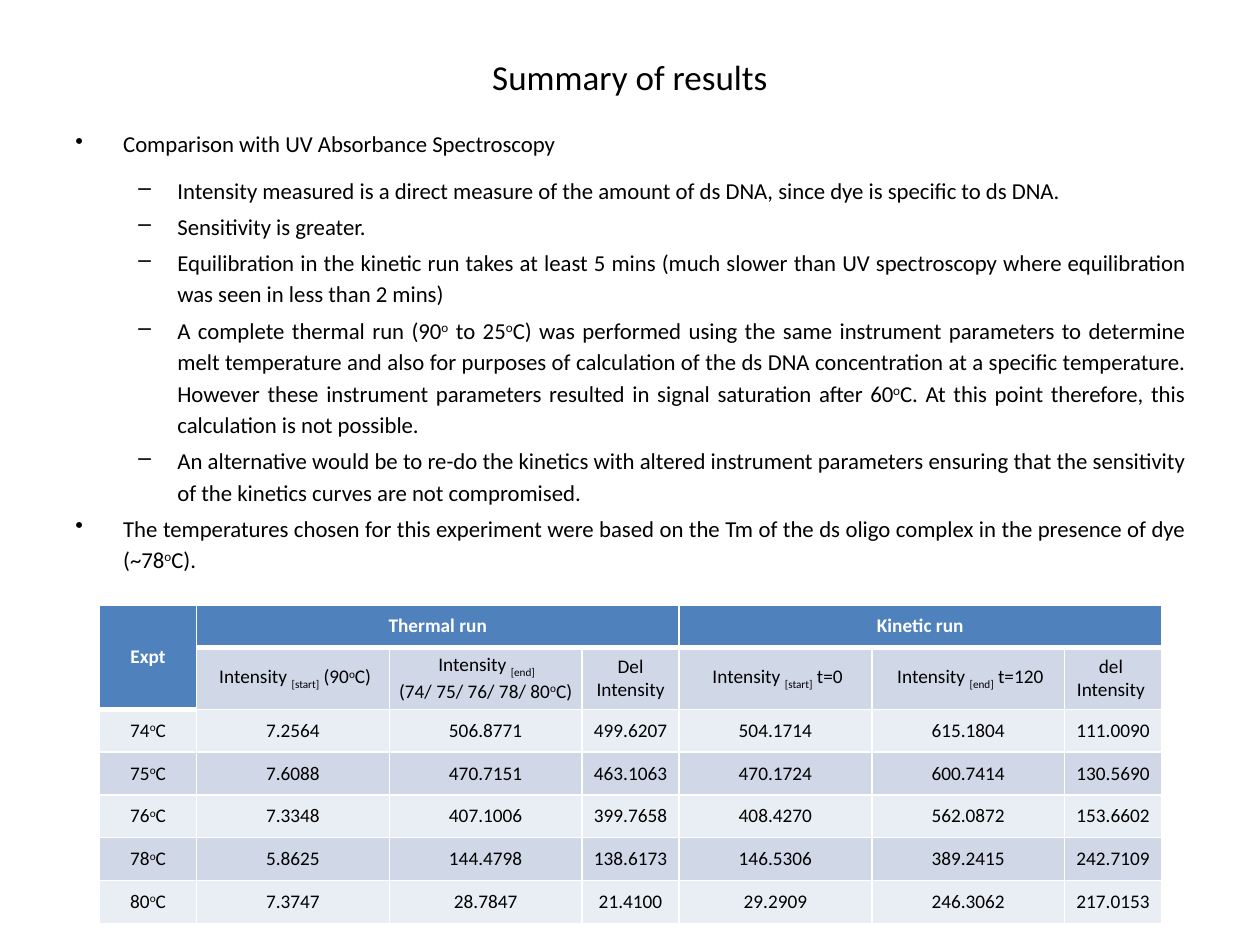
from dataclasses import dataclass

from lxml import etree
from pptx import Presentation
from pptx.dml.color import RGBColor
from pptx.enum.text import MSO_ANCHOR, PP_ALIGN
from pptx.oxml.ns import qn
from pptx.util import Inches, Pt

CENTER, JUSTIFY = PP_ALIGN.CENTER, PP_ALIGN.JUSTIFY
TOP, MIDDLE = MSO_ANCHOR.TOP, MSO_ANCHOR.MIDDLE


@dataclass(frozen=True)
class Theme:
    """Hold the colours and type sizes."""
    font: str = "Calibri"
    ink: str = "000000"
    white: str = "FFFFFF"
    head: str = "4F81BD"
    dark: str = "D0D8E8"
    light: str = "E9EDF4"
    title: int = 20
    body: int = 13
    cell: int = 11


THEME = Theme()
SHIFTS = {"^": "30000", "_": "-25000"}
LEVELS = [("•", 0.38, 0.38, 6), ("–", 0.81, 0.31, 0)]
POINTS = [
    (0, "Comparison with UV Absorbance Spectroscopy"),
    (1, "Intensity measured is a direct measure of the amount of ds DNA, "
        "since dye is specific to ds DNA."),
    (1, "Sensitivity is greater."),
    (1, "Equilibration in the kinetic run takes at least 5 mins (much slower "
        "than UV spectroscopy where equilibration was seen in less than 2 mins)"),
    (1, "A complete thermal run (90|^o| to 25|^o|C) was performed using the same "
        "instrument parameters to determine melt temperature and also for "
        "purposes of calculation of the ds DNA concentration at a specific "
        "temperature. However these instrument parameters resulted in signal "
        "saturation after 60|^o|C. At this point therefore, this calculation "
        "is not possible."),
    (1, "An alternative would be to re-do the kinetics with altered instrument "
        "parameters ensuring that the sensitivity of the kinetics curves are "
        "not compromised."),
    (0, "The temperatures chosen for this experiment were based on the Tm of "
        "the ds oligo complex in the presence of dye (~78|^o|C)."),
]
WIDTHS = [0.77] + [1.53, 1.53, 0.77] * 2
HEIGHTS = [0.34, 0.49] + [0.34] * 5
GROUPS = ["Expt", "Thermal run", "", "", "Kinetic run", "", ""]
HEADS = ["", " Intensity |_[start]| (90|^o|C)",
         " Intensity |_[end] \n(74/ 75/ 76/ 78/ 80|^o|C)", "Del\n Intensity ",
         " Intensity |_[start]| t=0", " Intensity |_[end]| t=120",
         "del \nIntensity "]
DATA = [
    ["74|^o|C", "7.2564", "506.8771", "499.6207", "504.1714", "615.1804", "111.0090"],
    ["75|^o|C", "7.6088", "470.7151", "463.1063", "470.1724", "600.7414", "130.5690"],
    ["76|^o|C", "7.3348", "407.1006", "399.7658", "408.4270", "562.0872", "153.6602"],
    ["78|^o|C", "5.8625", "144.4798", "138.6173", "146.5306", "389.2415", "242.7109"],
    ["80|^o|C", "7.3747", "28.7847", "21.4100", "29.2909", "246.3062", "217.0153"],
]


def add_runs(para, text, size, color=THEME.ink, bold=False):
    """Add runs split at bars, with ^ raised and _ lowered."""
    for part in text.split("|"):
        shift = SHIFTS.get(part[0])
        run = para.add_run()
        run.text = part[1:] if shift else part
        font = run.font
        font.name, font.size, font.bold = THEME.font, Pt(size), bold
        font.color.rgb = RGBColor.from_string(color)
        if shift:
            run._r.get_or_add_rPr().set("baseline", shift)


def add_box(slide, left, top, width, height, anchor):
    """Add a wrapping text box and return its frame."""
    box = slide.shapes.add_textbox(
        Inches(left), Inches(top), Inches(width), Inches(height))
    frame = box.text_frame
    frame.word_wrap, frame.vertical_anchor = True, anchor
    return frame


def add_title(slide):
    """Add the centred title."""
    para = add_box(slide, 0.5, -0.02, 9, 1.25, MIDDLE).paragraphs[0]
    para.alignment = CENTER
    add_runs(para, "Summary of results", THEME.title)


def add_points(slide):
    """Add the bulleted text on two levels."""
    frame = add_box(slide, 0.5, 0.95, 9, 4, TOP)
    for i, (level, text) in enumerate(POINTS):
        para = frame.add_paragraph() if i else frame.paragraphs[0]
        mark, left, hang, after = LEVELS[level]
        para.level, para.alignment = level, JUSTIFY
        para.line_spacing = Pt(18)
        para.space_before, para.space_after = Pt(THEME.body * 0.2), Pt(after)
        props = para._p.get_or_add_pPr()
        props.set("marL", str(Inches(left)))
        props.set("indent", str(-Inches(hang)))
        etree.SubElement(props, qn("a:buChar")).set("char", mark)
        add_runs(para, text, THEME.body)


def add_edges(cell, row):
    """Draw white borders, thick below the top row."""
    props = cell._tc.get_or_add_tcPr()
    for side in "LRTB":
        thick = (row, side) in ((0, "B"), (1, "T"))
        line = etree.SubElement(props, qn("a:ln" + side))
        line.set("w", str(Pt(3 if thick else 1)))
        fill = etree.SubElement(line, qn("a:solidFill"))
        etree.SubElement(fill, qn("a:srgbClr")).set("val", THEME.white)


def fill_cell(cell, row, text, top):
    """Style one cell and write its lines."""
    add_edges(cell, row)
    shade = THEME.head if top else THEME.dark if row % 2 else THEME.light
    cell.fill.solid()
    cell.fill.fore_color.rgb = RGBColor.from_string(shade)
    cell.vertical_anchor = MIDDLE
    cell.margin_left = cell.margin_right = 0
    cell.margin_top = cell.margin_bottom = 0
    if not text:
        return
    frame = cell.text_frame
    for i, words in enumerate(text.split("\n")):
        para = frame.add_paragraph() if i else frame.paragraphs[0]
        para.alignment = CENTER
        add_runs(para, words, THEME.cell, THEME.white if top else THEME.ink, top)


def add_grid(slide):
    """Add the table of results."""
    rows = [GROUPS, HEADS] + DATA
    table = slide.shapes.add_table(
        len(rows), len(WIDTHS), Inches(0.79), Inches(4.8),
        Inches(sum(WIDTHS)), Inches(sum(HEIGHTS))).table
    for col, width in zip(table.columns, WIDTHS):
        col.width = Inches(width)
    for band, height in zip(table.rows, HEIGHTS):
        band.height = Inches(height)
    for r, texts in enumerate(rows):
        for c, text in enumerate(texts):
            fill_cell(table.cell(r, c), r, text, r == 0 or (r, c) == (1, 0))
    table.cell(0, 0).merge(table.cell(1, 0))
    for c in (1, 4):
        table.cell(0, c).merge(table.cell(0, c + 2))


def main():
    """Build and save the slide."""
    deck = Presentation()
    deck.slide_width, deck.slide_height = Inches(10), Inches(7.5)
    slide = deck.slides.add_slide(deck.slide_layouts[6])
    add_title(slide)
    add_points(slide)
    add_grid(slide)
    deck.save("out.pptx")


if __name__ == "__main__":
    main()
